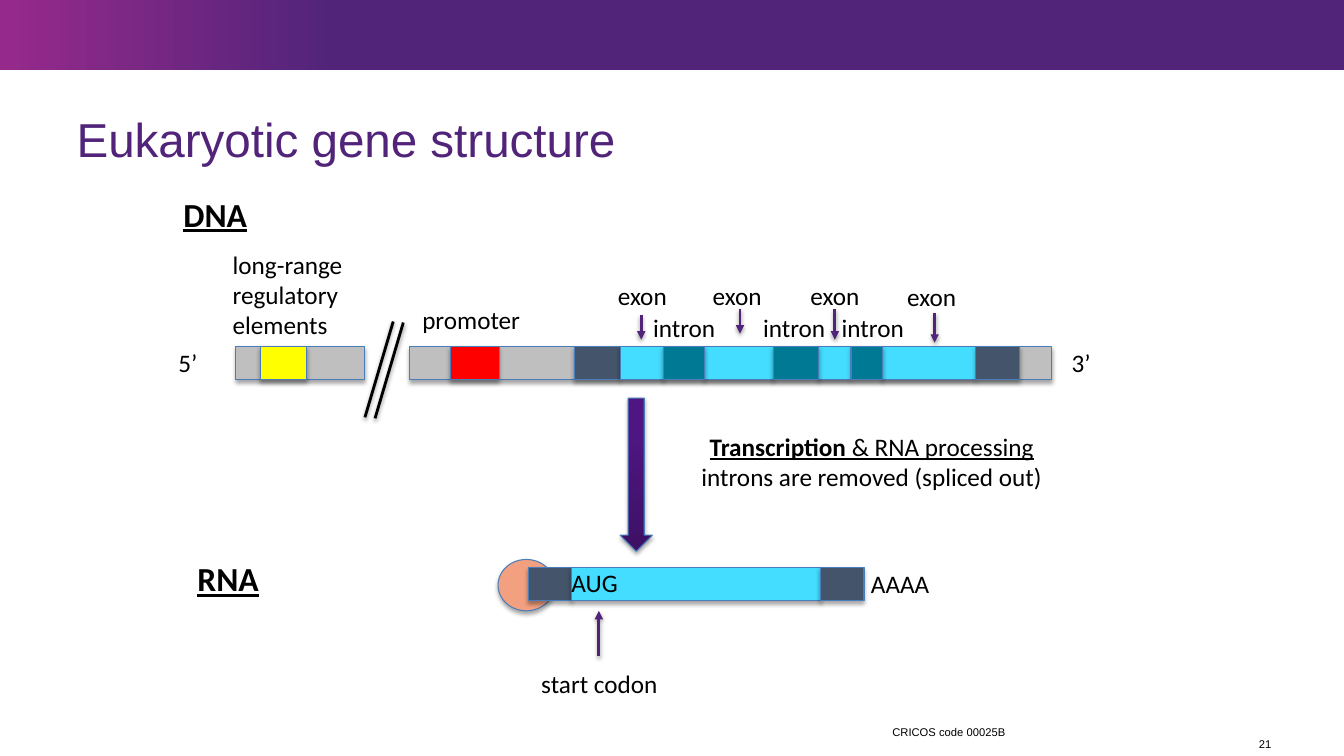
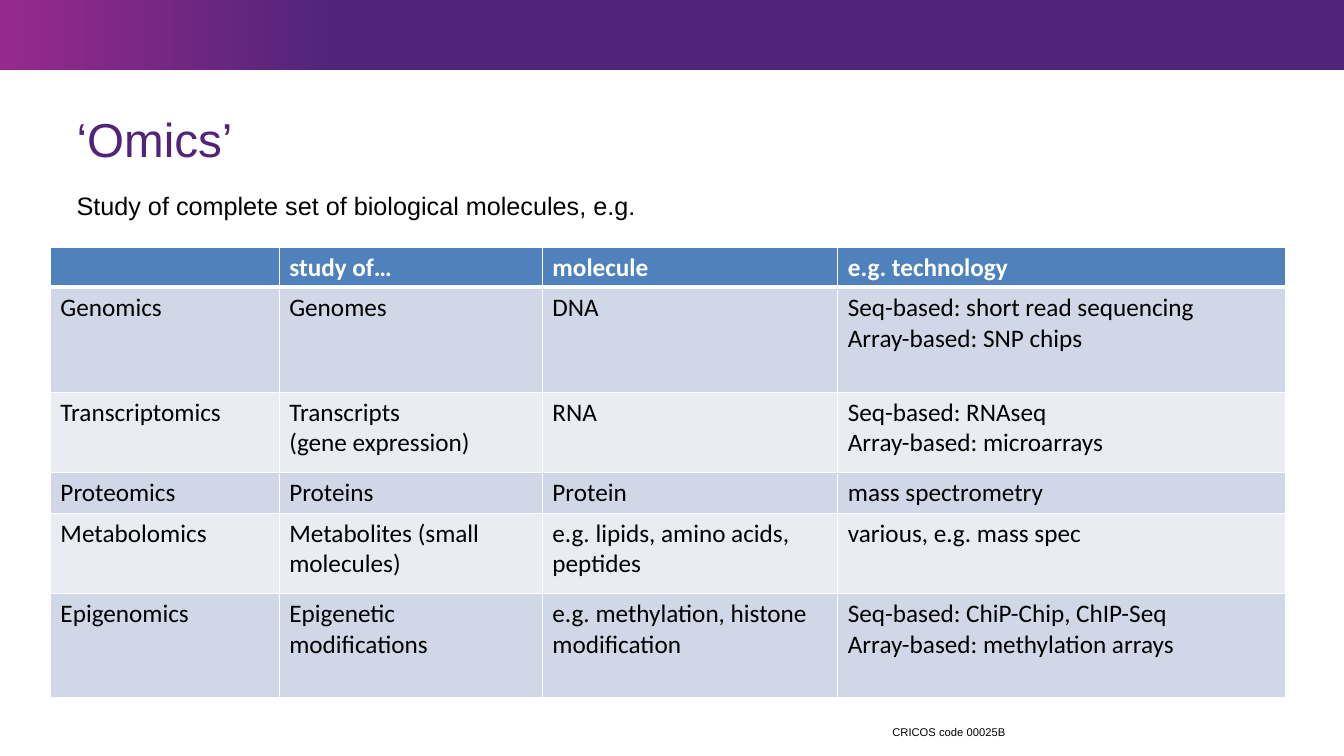
from itertools import accumulate

from lxml.etree import SubElement
from pptx import Presentation
from pptx.dml.color import RGBColor
from pptx.enum.shapes import MSO_CONNECTOR as Connector, MSO_SHAPE as Preset
from pptx.enum.text import MSO_ANCHOR as Anchor, PP_ALIGN as Align
from pptx.oxml.ns import qn
from pptx.util import Inches, Pt

WIDTH, HEIGHT = 13.33, 7.5
COLOURS = {
    "purple": "51247A", "magenta": "962A8B", "black": "000000", "white": "FFFFFF",
    "outline": "4A7EBB", "backbone": "BFBFBF", "regulator": "FFFF00", "promoter": "FF0000",
    "utr": "44546A", "exon": "44DCFF", "intron": "007995", "cap": "F3A080",
    "arrow dark": "3D1165", "arrow light": "4F1683",
    "header": "4F81BD", "odd row": "D0D8E7", "even row": "E9ECF3",
}

MARGIN, CONTENT_WIDTH = 0.76, 11.81
DNA_TOP, RNA_TOP, BAR_HEIGHT = 3.44, 5.63, 0.33

BACKBONES = [(2.34, 1.28, "backbone"), (4.06, 6.37, "backbone"),
             (2.58, 0.46, "regulator"), (4.47, 0.48, "promoter")]
GENE_LEFT = 5.7
GENE_PARTS = [("utr", 0.45), ("exon", 0.43), ("intron", 0.41), ("exon", 0.68), ("intron", 0.45),
              ("exon", 0.32), ("intron", 0.31), ("exon", 0.93), ("utr", 0.43)]
RNA_LEFT = 5.24
RNA_PARTS = [("utr", 0.43), ("exon", 2.47), ("utr", 0.43)]

HEADINGS = [("DNA", 1.72, 1.87), ("RNA", 1.86, 5.49)]
LABELS = [
    ("5’", 1.67, 3.4), ("3’", 10.53, 3.4), ("AAAA", 8.54, 5.59), ("AUG", 5.57, 5.58),
    ("long-range regulatory elements", 2.21, 2.42), ("promoter", 4.09, 2.97),
    ("exon", 6.03, 2.73), ("exon", 6.97, 2.73), ("exon", 7.94, 2.73), ("exon", 8.9, 2.74),
    ("intron", 6.38, 3.05), ("intron", 7.47, 3.05), ("intron", 8.25, 3.05),
    ("start codon", 5.27, 6.58),
]
PROCESSING = [
    [("Transcription", {"bold": True, "underline": True}),
     (" & RNA processing", {"underline": True})],
    "introns are removed (spliced out)",
]
POINTERS = [(6.36, 3.13, 3.37), (7.34, 3.07, 3.31), (8.28, 3.07, 3.37),
            (9.27, 3.11, 3.4), (5.94, 6.51, 6.06)]
BREAK_LINES = [((3.62, 4.14), (3.9, 3.19)), ((3.72, 4.15), (4, 3.2))]

OMICS_INTRO = "Study of complete set of biological molecules, e.g."
OMICS_COLUMNS = [2.27, 2.61, 2.93, 4.44]
OMICS_ROWS = [
    (0.39, ["", "study of…", "molecule", "e.g. technology"]),
    (1.04, ["Genomics", "Genomes", "DNA",
            "Seq-based: short read sequencing\nArray-based: SNP chips"]),
    (0.8, ["Transcriptomics", "Transcripts\n(gene expression)", "RNA",
           "Seq-based: RNAseq\nArray-based: microarrays"]),
    (0.39, ["Proteomics", "Proteins", "Protein", "mass spectrometry"]),
    (0.8, ["Metabolomics", "Metabolites (small molecules)",
           "e.g. lipids, amino acids, peptides", "various, e.g. mass spec"]),
    (1.03, ["Epigenomics", "Epigenetic modifications",
            "e.g. methylation, histone modification",
            "Seq-based: ChiP-Chip, ChIP-Seq\nArray-based: methylation arrays"]),
]


def colour(name):
    return RGBColor.from_string(COLOURS[name])


def inches(*lengths):
    return [Inches(length) for length in lengths]


def write(frame, paragraphs, size=18, font="Calibri", color="black", bold=False,
          underline=False, align=Align.LEFT, spacing=None, after=None):
    for index, content in enumerate(paragraphs):
        paragraph = frame.paragraphs[0] if index == 0 else frame.add_paragraph()
        paragraph.alignment = align
        if spacing:
            paragraph.line_spacing = spacing
        if after:
            paragraph.space_after = Pt(after)
        runs = [(content, {})] if isinstance(content, str) else content
        for text, style in runs:
            run = paragraph.add_run()
            run.text = text
            run.font.size = Pt(size)
            run.font.name = font
            run.font.bold = style.get("bold", bold)
            run.font.underline = style.get("underline", underline)
            run.font.color.rgb = colour(color)


def add_text(slide, box, paragraphs, inset=True, anchor=Anchor.TOP, **text_format):
    frame = slide.shapes.add_textbox(*inches(*box)).text_frame
    frame.word_wrap = True
    frame.vertical_anchor = anchor
    if not inset:
        frame.margin_left = frame.margin_right = frame.margin_top = frame.margin_bottom = 0
    write(frame, paragraphs, **text_format)


def add_shadow(shape, distance, opacity):
    properties = shape._element.spPr
    for effects in properties.findall(qn("a:effectLst")):
        properties.remove(effects)
    effects = SubElement(properties, qn("a:effectLst"))
    shadow = SubElement(effects, qn("a:outerShdw"), blurRad=str(Pt(3.1)), dist=str(Pt(distance)),
                        dir="5400000", rotWithShape="0")
    black = SubElement(shadow, qn("a:srgbClr"), val=COLOURS["black"])
    SubElement(black, qn("a:alpha"), val=str(opacity * 1000))


def fill_gradient(shape, stops, angle):
    shape.fill.gradient()
    shape.fill.gradient_angle = angle
    for stop, (position, name) in zip(shape.fill.gradient_stops, stops):
        stop.position = position
        stop.color.rgb = colour(name)


def add_block(slide, box, fill, preset=Preset.RECTANGLE, outline="outline"):
    shape = slide.shapes.add_shape(preset, *inches(*box))
    if isinstance(fill, str):
        shape.fill.solid()
        shape.fill.fore_color.rgb = colour(fill)
    else:
        fill_gradient(shape, fill, 90)
    shape.line.color.rgb = colour(outline)
    shape.line.width = Pt(0.75)
    add_shadow(shape, 1.8, 35)


def add_line(slide, start, end, name, arrow=False):
    connector = slide.shapes.add_connector(Connector.STRAIGHT, *inches(*start, *end))
    connector.line.color.rgb = colour(name)
    connector.line.width = Pt(2)
    if arrow:
        SubElement(connector.line._get_or_add_ln(), qn("a:tailEnd"), type="triangle")
    add_shadow(connector, 1.6, 38)


def add_parts(slide, left, top, parts):
    edges = accumulate((width for _, width in parts), initial=left)
    placed = list(zip(edges, parts))
    for edge, (name, width) in sorted(placed, key=lambda item: item[1][0] == "intron"):
        add_block(slide, (edge, top, width, BAR_HEIGHT), name)


def add_base_slide(presentation, title):
    slide = presentation.slides.add_slide(presentation.slide_layouts[6])
    band = slide.shapes.add_shape(Preset.RECTANGLE, *inches(0, 0, WIDTH, 0.69))
    band.shadow.inherit = False
    band.line.fill.background()
    fill_gradient(band, [(0, "magenta"), (0.25, "purple")], 0)
    add_text(slide, (8.85, 7.13, 2.61, 0.26), ["CRICOS code 00025B"], inset=False,
             anchor=Anchor.MIDDLE, size=8, font="Arial")
    add_text(slide, (MARGIN, 1.15, CONTENT_WIDTH, 0.51), [title], inset=False,
             anchor=Anchor.MIDDLE, size=34, font="Arial", color="purple", spacing=0.9)
    return slide


def build_gene_slide(presentation):
    slide = add_base_slide(presentation, "Eukaryotic gene structure")
    add_text(slide, (12.3, 7.25, 0.31, 0.26), ["21"], inset=False, anchor=Anchor.MIDDLE,
             size=8, font="Arial", align=Align.RIGHT)
    add_block(slide, (4.94, 5.55, 0.56, 0.51), "cap", Preset.OVAL)
    for left, width, name in BACKBONES:
        add_block(slide, (left, DNA_TOP, width, BAR_HEIGHT), name)
    add_parts(slide, GENE_LEFT, DNA_TOP, GENE_PARTS)
    add_parts(slide, RNA_LEFT, RNA_TOP, RNA_PARTS)
    add_block(slide, (6.15, 3.95, 0.32, 1.52), [(0, "arrow dark"), (0.8, "arrow light")],
              Preset.DOWN_ARROW)
    for start, end in BREAK_LINES:
        add_line(slide, start, end, "black")
    for text, left, top in HEADINGS:
        add_text(slide, (left, top, 1.39, 0.5), [text], size=24, bold=True, underline=True)
    for text, left, top in LABELS:
        add_text(slide, (left, top, 1.56, 0.4), [text])
    add_text(slide, (6.39, 4.23, 4.51, 0.7), PROCESSING, align=Align.CENTER)
    for x, start, end in POINTERS:
        add_line(slide, (x, start), (x, end), "purple", arrow=True)


def set_borders(cell, bottom):
    properties = cell._tc.get_or_add_tcPr()
    for side, width in (("L", 0.96), ("R", 0.96), ("T", 0.96), ("B", bottom)):
        border = SubElement(properties, qn(f"a:ln{side}"), w=str(Pt(width)))
        fill = SubElement(border, qn("a:solidFill"))
        SubElement(fill, qn("a:srgbClr"), val=COLOURS["white"])


def build_omics_slide(presentation):
    slide = add_base_slide(presentation, "‘Omics’")
    add_text(slide, (MARGIN, 1.86, CONTENT_WIDTH, 0.5), [OMICS_INTRO], inset=False,
             font="Arial", spacing=1.1, after=3)
    heights = [height for height, _ in OMICS_ROWS]
    table = slide.shapes.add_table(len(heights), len(OMICS_COLUMNS), *inches(
        0.5, 2.45, sum(OMICS_COLUMNS), sum(heights))).table
    for column, width in zip(table.columns, OMICS_COLUMNS):
        column.width = Inches(width)
    for row_index, (height, texts) in enumerate(OMICS_ROWS):
        table.rows[row_index].height = Inches(height)
        header = row_index == 0
        fill = "header" if header else "odd row" if row_index % 2 else "even row"
        for cell, text in zip(table.rows[row_index].cells, texts):
            set_borders(cell, 3 if header else 0.96)
            cell.fill.solid()
            cell.fill.fore_color.rgb = colour(fill)
            if text:
                write(cell.text_frame, text.split("\n"), bold=header,
                      color="white" if header else "black")


def main():
    presentation = Presentation()
    presentation.slide_width, presentation.slide_height = inches(WIDTH, HEIGHT)
    build_gene_slide(presentation)
    build_omics_slide(presentation)
    presentation.save("out.pptx")


if __name__ == "__main__":
    main()
